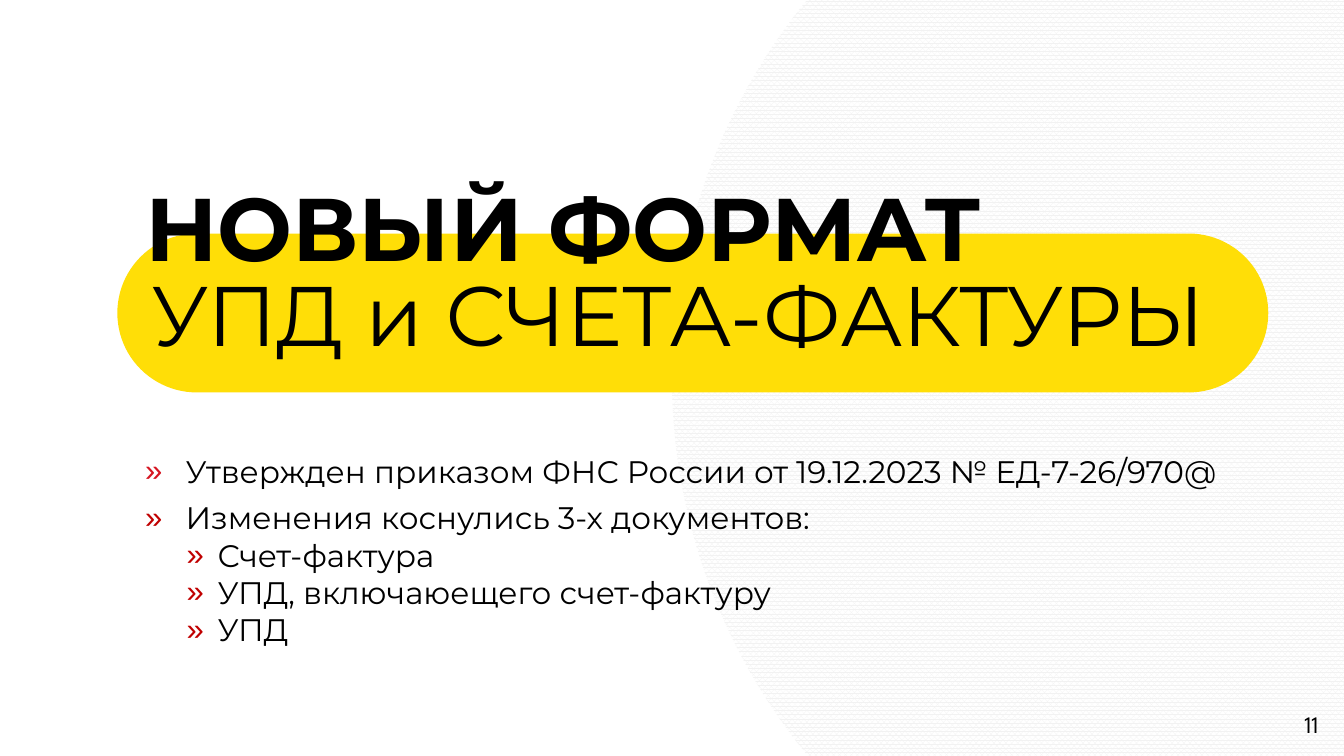
import pptx
import pptx.dml.color
import pptx.enum.dml
import pptx.enum.shapes
import pptx.enum.text
import pptx.oxml
import pptx.oxml.ns
import pptx.util

RGBColor = pptx.dml.color.RGBColor
BLACK = RGBColor(0x00, 0x00, 0x00)
WHITE = RGBColor(0xFF, 0xFF, 0xFF)
PALE_GREY = RGBColor(0xF2, 0xF2, 0xF2)
YELLOW = RGBColor(0xFF, 0xDE, 0x07)
BRIGHT_RED = RGBColor(0xD6, 0x15, 0x21)
DARK_RED = RGBColor(0xC0, 0x00, 0x00)

deck = pptx.Presentation()
deck.slide_width = pptx.util.Inches(12.6)
deck.slide_height = pptx.util.Inches(7.09)
COLUMN = deck.slide_width / 126
ROW = deck.slide_height / 70.9


def cells(left, top, width, height):
    return [round(left * COLUMN), round(top * ROW), round(width * COLUMN), round(height * ROW)]


def style(paragraph, size, font="Montserrat", bold=False):
    paragraph.alignment = pptx.enum.text.PP_ALIGN.LEFT
    paragraph.font.size = pptx.util.Pt(size)
    paragraph.font.name = font
    paragraph.font.bold = bold
    paragraph.font.color.rgb = BLACK


slide = deck.slides.add_slide(deck.slide_layouts[1])
heading, points = slide.placeholders

backdrop = slide.shapes.add_shape(
    pptx.enum.shapes.MSO_SHAPE.OVAL, *cells(63, -20.4, 111.6, 111.6))
backdrop.fill.patterned()
backdrop.fill.pattern = pptx.enum.dml.MSO_PATTERN.PERCENT_75
backdrop.fill.fore_color.rgb = PALE_GREY
backdrop.fill.back_color.rgb = WHITE

subject = slide.shapes.add_shape(
    pptx.enum.shapes.MSO_SHAPE.ROUNDED_RECTANGLE, *cells(11, 21.9, 107.9, 14.9))
subject.adjustments[0] = 0.5
subject.fill.solid()
subject.fill.fore_color.rgb = YELLOW
subject.text_frame.text = "УПД и СЧЕТА-ФАКТУРЫ"
style(subject.text_frame.paragraphs[0], 57)

for panel in (backdrop, subject):
    panel.line.fill.background()
    panel.shadow.inherit = False

for placeholder, area in (
    (heading, cells(12.6, 15.7, 86.6, 11.1)),
    (points, cells(12.6, 40.2, 102.4, 30.1)),
):
    placeholder.left, placeholder.top, placeholder.width, placeholder.height = area
    placeholder.text_frame.auto_size = pptx.enum.text.MSO_AUTO_SIZE.NONE
    placeholder.text_frame.vertical_anchor = pptx.enum.text.MSO_ANCHOR.TOP
    placeholder.text_frame.word_wrap = True
    placeholder.text_frame.margin_right = 0
    subject.element.getparent().append(placeholder.element)

heading.text_frame.text = "НОВЫЙ ФОРМАТ"
style(heading.text_frame.paragraphs[0], 60, bold=True)

items = [
    (0, BRIGHT_RED, 1.5, 6, "Утвержден приказом ФНС России от 19.12.2023 № ЕД-7-26/970@"),
    (0, DARK_RED, 1.0, 0, "Изменения коснулись 3-х документов:"),
    (1, DARK_RED, 1.0, 0, "Счет-фактура"),
    (1, DARK_RED, 1.0, 0, "УПД, включаюещего счет-фактуру"),
    (1, DARK_RED, 1.0, 0, "УПД"),
]
indents = [(3.8, -3.8), (6.8, -2.9)]
points.text_frame.text = "\n".join(item[-1] for item in items)
for point, (level, bullet_color, spacing, after, _) in zip(points.text_frame.paragraphs, items):
    point.level = level
    properties = point._p.get_or_add_pPr()
    margin, indent = indents[level]
    properties.set("marL", str(round(margin * COLUMN)))
    properties.set("indent", str(round(indent * COLUMN)))
    namespace = pptx.oxml.ns.nsdecls("a")
    properties.append(pptx.oxml.parse_xml(
        f'<a:buClr {namespace}><a:srgbClr val="{bullet_color}"/></a:buClr>'))
    properties.append(pptx.oxml.parse_xml(f'<a:buChar {namespace} char="»"/>'))
    point.line_spacing = spacing
    point.space_before = pptx.util.Pt(0)
    point.space_after = pptx.util.Pt(after)
    style(point, 21)

page_number = slide.shapes.add_textbox(*cells(121.3, 66.1, 4.7, 3.7))
page_number.text_frame.word_wrap = True
page_number.text_frame.text = "11"
style(page_number.text_frame.paragraphs[0], 16, "League Spartan")

deck.save("out.pptx")
